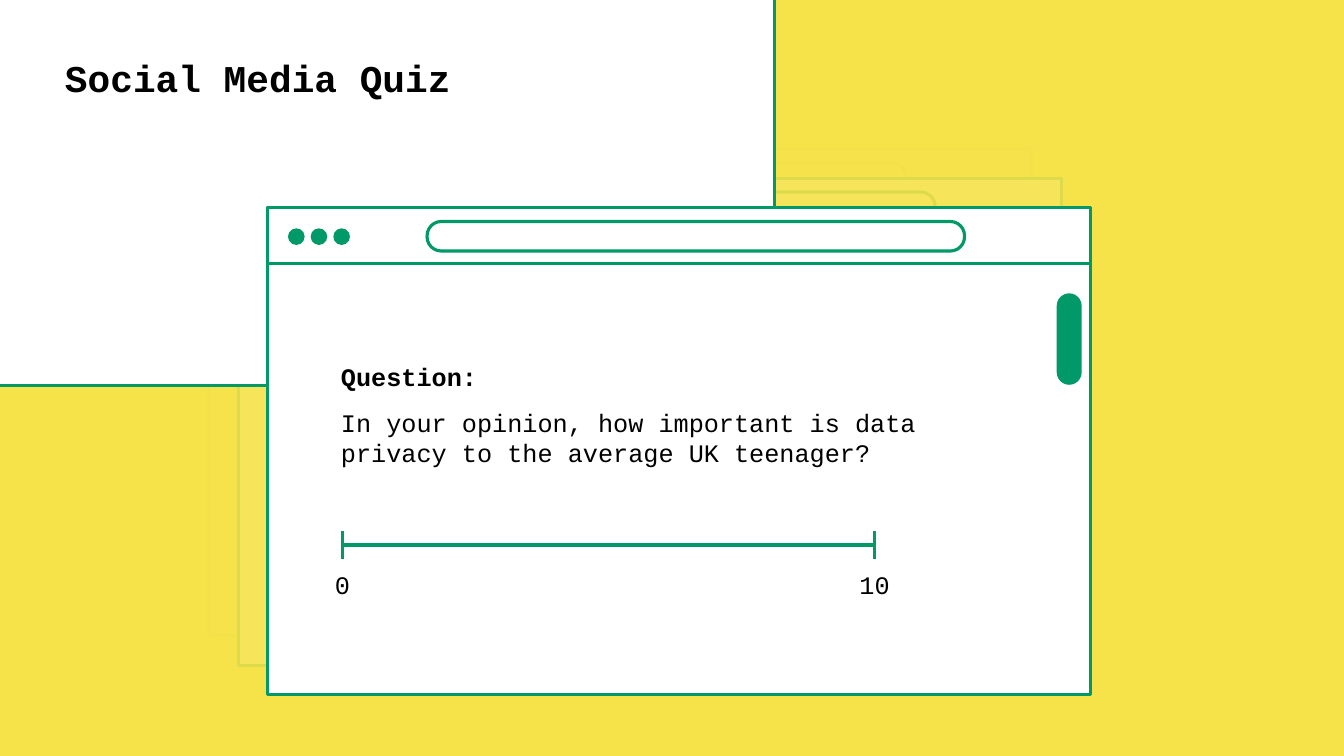
from lxml.etree import SubElement
from pptx import Presentation
from pptx.dml.color import RGBColor
from pptx.enum.shapes import MSO_CONNECTOR, MSO_SHAPE
from pptx.enum.text import MSO_ANCHOR, MSO_AUTO_SIZE, PP_ALIGN
from pptx.oxml.ns import qn
from pptx.util import Inches, Pt

# Content
TITLE = "Social Media Quiz"
QUESTION = [("Question:", True),
            ("In your opinion, how important is data privacy to the average UK teenager?", False)]
SCALE_ENDS = [("0", 4.53, 0.41), ("10", 11.57, 0.62)]  # label, tick x, label width

# Look
FONT = "Courier New"
YELLOW, GREEN, WHITE, BLACK = "F6E249", "019967", "FFFFFF", "000000"
SLIDE_W, SLIDE_H = 17.78, 10
WINDOW_X, WINDOW_Y, WINDOW_W, WINDOW_H = 2.76, 1.97, 10.89, 6.44
BAR_H, CASCADE = 0.74, 0.39
SCALE_Y, TICK = 7.21, 0.18

deck = Presentation()
deck.slide_width, deck.slide_height = Inches(SLIDE_W), Inches(SLIDE_H)
slide = deck.slides.add_slide(deck.slide_layouts[1])


def paint(fmt, color):
    fmt.solid()
    fmt.fore_color.rgb = RGBColor.from_string(color)


def place(part, *box):
    part.left, part.top, part.width, part.height = map(Inches, box)


def draw(preset, box, fill=None, line=None, weight=3, round_by=None, opacity=None):
    part = slide.shapes.add_shape(preset, *map(Inches, box))
    part.shadow.inherit = False
    if round_by is not None:
        part.adjustments[0] = round_by
    if fill:
        paint(part.fill, fill)
    else:
        part.fill.background()
    if opacity:
        color = part.fill._xPr.find(qn("a:solidFill"))[0]
        SubElement(color, qn("a:alpha")).set("val", str(opacity * 1000))
    if line:
        paint(part.line.fill, line)
        part.line.width = Pt(weight)
    else:
        part.line.fill.background()


def draw_line(x1, y1, x2, y2):
    rule = slide.shapes.add_connector(MSO_CONNECTOR.STRAIGHT, *map(Inches, (x1, y1, x2, y2)))
    paint(rule.line.fill, GREEN)
    rule.line.width = Pt(3)
    SubElement(rule._element.spPr, qn("a:effectLst"))


def write(paragraph, words, size, bold=False, align=PP_ALIGN.LEFT, after=0):
    paragraph.alignment = align
    paragraph.space_before, paragraph.space_after = Pt(0), Pt(after)
    run = paragraph.add_run()
    run.text = words
    run.font.name, run.font.size, run.font.bold = FONT, Pt(size), bold
    run.font.color.rgb = RGBColor.from_string(BLACK)


def set_frame(frame, wrap=True):
    frame.word_wrap = wrap
    frame.auto_size = MSO_AUTO_SIZE.NONE
    frame.vertical_anchor = MSO_ANCHOR.TOP


def bring_to_front(part):
    part._element.getparent().append(part._element)


def draw_window(level):
    x, y = WINDOW_X + level * CASCADE, WINDOW_Y + level * CASCADE
    for height in (WINDOW_H, BAR_H):
        draw(MSO_SHAPE.RECTANGLE, (x, y, WINDOW_W, height), WHITE, GREEN)
    draw(MSO_SHAPE.ROUNDED_RECTANGLE, (x + 2.11, y + 0.18, 7.11, 0.39),
         line=GREEN, round_by=0.48)


# Background and the two faded windows
paint(slide.background.fill, YELLOW)
for level in range(2):
    draw_window(level)
    draw(MSO_SHAPE.RECTANGLE, (0, 0, SLIDE_W, SLIDE_H), YELLOW, opacity=90)

# Title panel
draw(MSO_SHAPE.RECTANGLE, (-0.64, -0.25, WINDOW_W, 5.35), WHITE, GREEN, 2.75)
title = slide.shapes.title
place(title, 0.76, 0.67, 5.46, 0.58)
set_frame(title.text_frame)
write(title.text_frame.paragraphs[0], TITLE, 36, bold=True)
bring_to_front(title)

# Front window with scroll bar and buttons
draw_window(2)
draw(MSO_SHAPE.ROUNDED_RECTANGLE, (13.98, 3.88, 0.33, 1.21), GREEN, round_by=0.5)
for button in range(3):
    draw(MSO_SHAPE.OVAL, (3.81 + button * 0.3, 3.02, 0.22, 0.22), GREEN)

# Question
question = slide.placeholders[1]
place(question, 4.38, 4.71, 8.96, 1.64)
frame = question.text_frame
set_frame(frame)
frame.margin_left = frame.margin_right = Inches(0.13)
frame.margin_top = frame.margin_bottom = Inches(0.07)
for i, (words, bold) in enumerate(QUESTION):
    paragraph = frame.add_paragraph() if i else frame.paragraphs[0]
    write(paragraph, words, 24, bold, after=15)
    props = paragraph._p.get_or_add_pPr()
    props.set("marL", "0")
    props.set("indent", "0")
    SubElement(props, qn("a:buNone"))
bring_to_front(question)

# Answer scale
draw_line(SCALE_ENDS[0][1], SCALE_Y, SCALE_ENDS[1][1], SCALE_Y)
for words, x, width in SCALE_ENDS:
    draw_line(x, SCALE_Y + TICK, x, SCALE_Y - TICK)
    label = slide.shapes.add_textbox(*map(Inches, (x - width / 2, 7.48, width, 0.5)))
    set_frame(label.text_frame, wrap=False)
    write(label.text_frame.paragraphs[0], words, 24, align=PP_ALIGN.CENTER)

deck.save("out.pptx")
